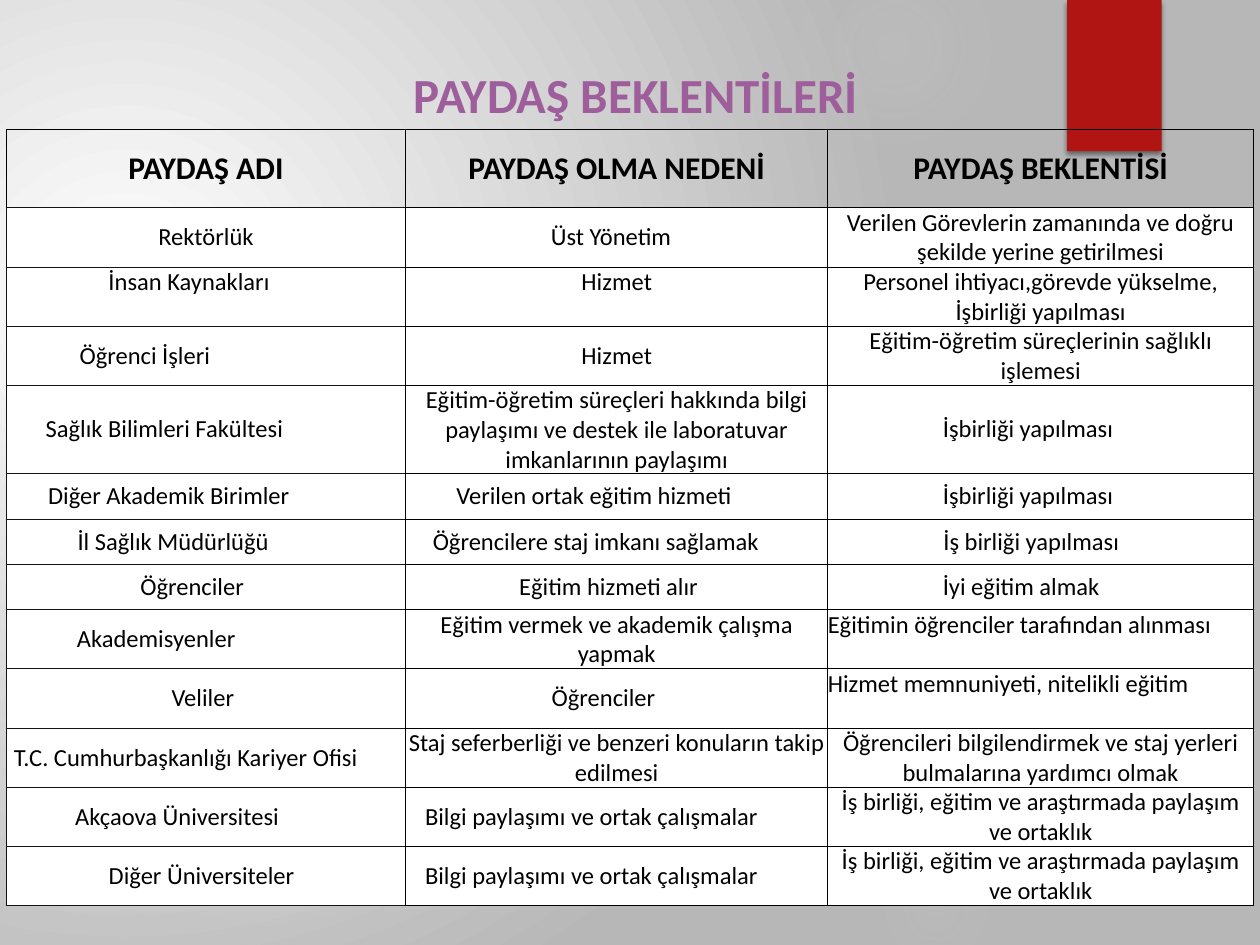
from lxml import etree
from pptx import Presentation
from pptx.dml.color import RGBColor
from pptx.enum.shapes import MSO_SHAPE
from pptx.enum.text import MSO_ANCHOR, PP_ALIGN
from pptx.oxml import parse_xml
from pptx.oxml.ns import nsdecls, qn
from pptx.util import Inches, Pt

OVAL, RECTANGLE = MSO_SHAPE.OVAL, MSO_SHAPE.RECTANGLE
TOP, MIDDLE = MSO_ANCHOR.TOP, MSO_ANCHOR.MIDDLE
LEFT, CENTER = PP_ALIGN.LEFT, PP_ALIGN.CENTER

WHITE = RGBColor(0xFF, 0xFF, 0xFF)
BLACK = RGBColor(0x00, 0x00, 0x00)
INK = RGBColor(0x14, 0x13, 0x12)
GRAY = RGBColor(0xB7, 0xB7, 0xB7)
GLOW = RGBColor(0xD9, 0xD9, 0xD9)
RED = RGBColor(0xB0, 0x15, 0x13)
PURPLE = RGBColor(0x9E, 0x5E, 0x9B)
FONT = "Calibri"

TITLE = "PAYDAŞ BEKLENTİLERİ"
HEADERS = ["PAYDAŞ ADI", "PAYDAŞ OLMA NEDENİ", "PAYDAŞ BEKLENTİSİ"]

LINES_AND_INSET_TEXTS = [
    (2, ("Rektörlük", 0), ("Üst Yönetim", 0.09),
     ("Verilen Görevlerin zamanında ve doğru şekilde yerine getirilmesi", 0)),
    (2, ("İnsan Kaynakları", 0.27), ("Hizmet", 0),
     ("Personel ihtiyacı,görevde yükselme, İşbirliği yapılması", 0)),
    (2, ("Öğrenci İşleri", 0.97), ("Hizmet", 0),
     ("Eğitim-öğretim süreçlerinin sağlıklı işlemesi", 0)),
    (3, ("Sağlık Bilimleri Fakültesi", 0.66),
     ("Eğitim-öğretim süreçleri hakkında bilgi paylaşımı ve destek ile "
      "laboratuvar imkanlarının paylaşımı", 0),
     ("İşbirliği yapılması", 0.2)),
    (1, ("Diğer Akademik Birimler", 0.59), ("Verilen ortak eğitim hizmeti", 0.36),
     ("İşbirliği yapılması", 0.2)),
    (1, ("İl Sağlık Müdürlüğü", 0.52), ("Öğrencilere staj imkanı sağlamak", 0.33),
     ("İş birliği yapılması", 0.15)),
    (1, ("Öğrenciler", 0.22), ("Eğitim hizmeti alır", 0.13),
     ("İyi eğitim almak", 0.31)),
    (2, ("Akademisyenler", 0.79), ("Eğitim vermek ve akademik çalışma yapmak", 0),
     ("Eğitimin öğrenciler tarafından alınması", 0)),
    (2, ("Veliler", 0.05), ("Öğrenciler", 0.21),
     ("Hizmet memnuniyeti, nitelikli eğitim", 0)),
    (2, ("T.C. Cumhurbaşkanlığı Kariyer Ofisi", 0.32),
     ("Staj seferberliği ve benzeri konuların takip edilmesi", 0),
     ("Öğrencileri bilgilendirmek ve staj yerleri bulmalarına yardımcı olmak", 0)),
    (2, ("Akçaova Üniversitesi", 0.46), ("Bilgi paylaşımı ve ortak çalışmalar", 0.4),
     ("İş birliği, eğitim ve araştırmada paylaşım ve ortaklık", 0)),
    (2, ("Diğer Üniversiteler", 0.07), ("Bilgi paylaşımı ve ortak çalışmalar", 0.4),
     ("İş birliği, eğitim ve araştırmada paylaşım ve ortaklık", 0)),
]
TOP_CELLS = {(2, 0), (2, 1), (8, 2), (9, 2)}
LEFT_CELLS = {(8, 2), (9, 2)}
COLUMN_WIDTHS = [3.17, 3.35, 3.38]
HEADER_HEIGHT = 0.62
LINE_HEIGHTS = {1: 0.36, 2: 0.47, 3: 0.7}

GLOWS = [
    (6.89, 1.83, 3.08, [(0, 7), (36, 6), (69, 0)]),
    (6.22, -0.5, 1.75, [(0, 14), (36, 7), (73, 0)]),
    (6.89, 6.67, 1.08, [(0, 9), (36, 5), (66, 0)]),
    (-0.17, 2.92, 4.58, [(0, 11), (36, 10), (75, 0)]),
    (-0.92, 3.17, 2.58, [(0, 8), (36, 8), (72, 0)]),
]


def radial_fill(stops, focus):
    marks = "".join(
        f'<a:gs pos="{place * 1000}"><a:srgbClr val="{color}">'
        f'<a:alpha val="{alpha * 1000}"/></a:srgbClr></a:gs>'
        for place, color, alpha in stops)
    sides = " ".join(f'{side}="{share * 1000}"' for side, share in zip("ltrb", focus))
    return (f'<a:gradFill {nsdecls("a")} rotWithShape="1"><a:gsLst>{marks}</a:gsLst>'
            f'<a:path path="circle"><a:fillToRect {sides}/></a:path></a:gradFill>')


def add_plain_shape(page, kind, left, top, width, height, color):
    shape = page.shapes.add_shape(
        kind, Inches(left), Inches(top), Inches(width), Inches(height))
    shape.shadow.inherit = False
    shape.fill.solid()
    shape.fill.fore_color.rgb = color
    shape.line.fill.background()
    return shape


def write(frame, text, size, color, bold, align=CENTER):
    para = frame.paragraphs[0]
    para.alignment = align
    span = para.add_run()
    span.text = text
    span.font.name = FONT
    span.font.size = Pt(size)
    span.font.bold = bold
    span.font.color.rgb = color


def set_borders(cell, colors):
    properties = cell._tc.get_or_add_tcPr()
    for index, (side, color) in enumerate(zip("LRTB", colors)):
        properties.insert(index, parse_xml(
            f'<a:ln{side} {nsdecls("a")} w="{Pt(0.5)}"><a:solidFill>'
            f'<a:srgbClr val="{color}"/></a:solidFill></a:ln{side}>'))


def add_background(page):
    page.background.fill.solid()
    properties = page.background._cSld.bg.bgPr
    gradient = radial_fill([(0, WHITE, 100), (100, GRAY, 100)], (45, 65, 125, 100))
    properties.replace(properties.find(qn("a:solidFill")), parse_xml(gradient))
    for left, top, size, fades in GLOWS:
        glow = add_plain_shape(page, OVAL, left, top, size, size, GLOW)
        stops = [(place, GLOW, alpha) for place, alpha in fades]
        properties = glow._element.spPr
        properties.replace(properties.find(qn("a:solidFill")),
                           parse_xml(radial_fill(stops, (50, 50, 50, 50))))


def add_ribbon(page):
    ribbon = add_plain_shape(page, RECTANGLE, 8.47, 0, 0.75, 1.2, RED)
    effects = ribbon._element.spPr.find(qn("a:effectLst"))
    shadow = etree.SubElement(effects, qn("a:outerShdw"), blurRad=str(Pt(3)),
                              dist=str(Pt(2)), dir="5400000", rotWithShape="0")
    tint = etree.SubElement(shadow, qn("a:srgbClr"), val=str(BLACK))
    etree.SubElement(tint, qn("a:alpha"), val="45000")


def add_stakeholder_table(page):
    heights = [HEADER_HEIGHT] + [LINE_HEIGHTS[row[0]] for row in LINES_AND_INSET_TEXTS]
    contents = [[(text, 0) for text in HEADERS]]
    contents += [row[1:] for row in LINES_AND_INSET_TEXTS]
    table = page.shapes.add_table(
        len(contents), len(HEADERS), Inches(0.05), Inches(1.03),
        Inches(sum(COLUMN_WIDTHS)), Inches(sum(heights))).table
    table.first_row = table.horz_banding = False
    for column, width in zip(table.columns, COLUMN_WIDTHS):
        column.width = Inches(width)
    for r, (height, entries) in enumerate(zip(heights, contents)):
        table.rows[r].height = Inches(height)
        header = r == 0
        for c, (text, inset) in enumerate(entries):
            cell = table.cell(r, c)
            cell.margin_left = cell.margin_top = cell.margin_bottom = 0
            cell.margin_right = Inches(inset)
            cell.vertical_anchor = TOP if (r, c) in TOP_CELLS else MIDDLE
            if header:
                cell.fill.background()
            else:
                cell.fill.solid()
                cell.fill.fore_color.rgb = WHITE
            edge = INK if c == 0 and not header else BLACK
            set_borders(cell, (edge, BLACK, edge, INK if c == 0 else BLACK))
            write(cell.text_frame, text, 18 if header else 14, BLACK, header,
                  LEFT if (r, c) in LEFT_CELLS else CENTER)


def main():
    deck = Presentation()
    deck.slide_width, deck.slide_height = Inches(10), Inches(7.5)
    page = deck.slides.add_slide(deck.slide_layouts[6])
    add_background(page)
    add_ribbon(page)
    box = page.shapes.add_textbox(Inches(2.27), Inches(0.46), Inches(5.55), Inches(0.57))
    box.text_frame.word_wrap = True
    write(box.text_frame, TITLE, 28, PURPLE, True)
    add_stakeholder_table(page)
    deck.save("out.pptx")


if __name__ == "__main__":
    main()
